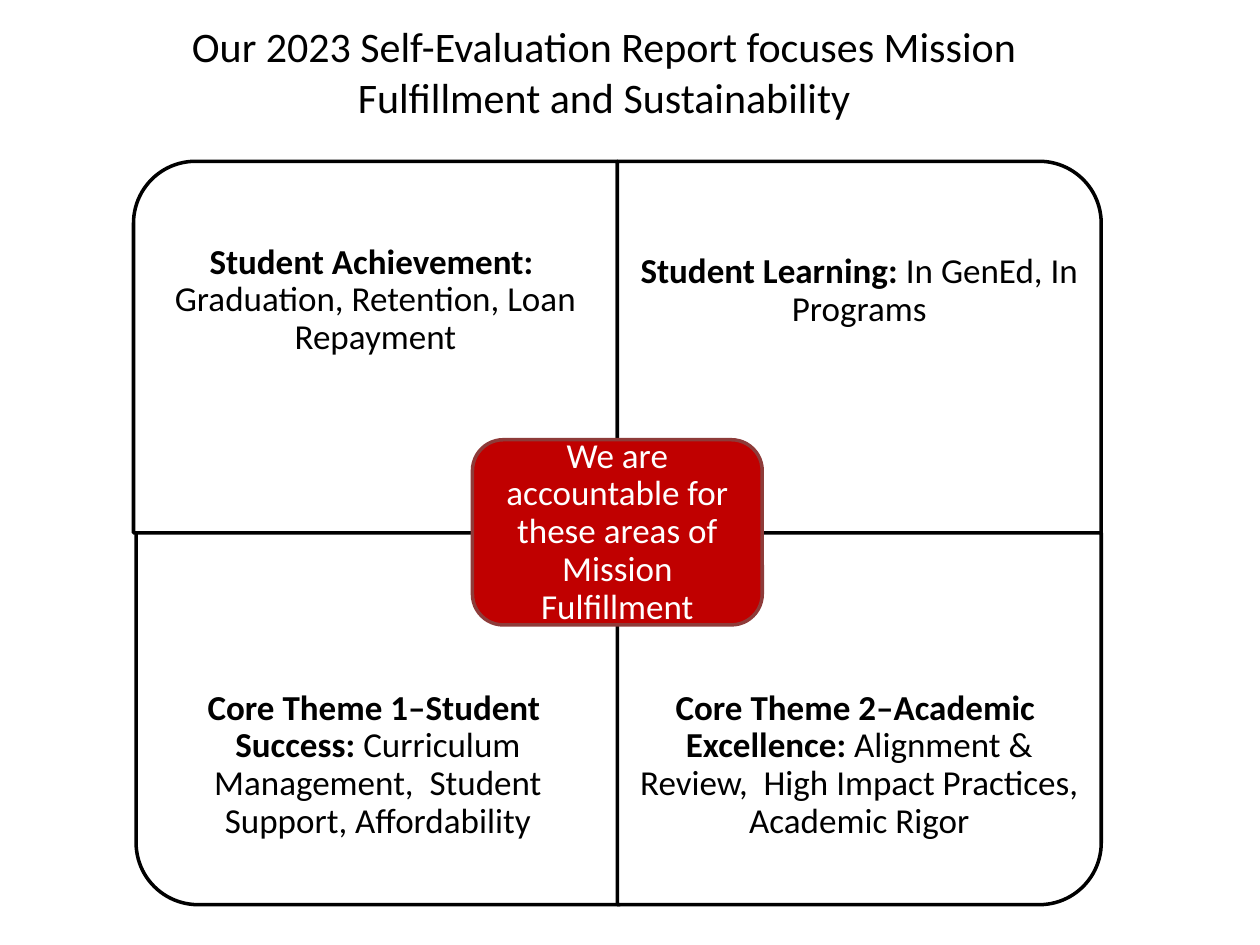
from pptx import Presentation
from pptx.dml.color import RGBColor as Rgb
from pptx.enum.shapes import MSO_SHAPE as Shape
from pptx.enum.text import MSO_ANCHOR as Anchor, MSO_AUTO_SIZE as Auto, PP_ALIGN as Align
from pptx.util import Inches, Pt

COLORS = {"ink": "000000", "paper": "FFFFFF", "red": "C00000", "edge": "8E3B39"}
FONT = "Calibri"
WIDE, HIGH = 3.84, 2.95   # one quadrant
TEXT_H = 2.21             # its text area, at the outer edge
TOP, MID = 1.28, 4.23

# left, top, rotation, text top, side inset, bottom inset, bold text, plain text
QUADS = [
    (1.06, TOP, 270, TOP, 0.16, 0.16,
     "Student Achievement:  ", "Graduation, Retention, Loan Repayment"),
    (4.9, TOP, 0, TOP, 0.07, 0.22,
     "Student Learning: ", "In GenEd, In Programs"),
    (1.08, MID, 180, 4.97, 0.16, 0.16,
     "Core Theme 1–Student  Success: ",
     "Curriculum Management,  Student Support, Affordability"),
    (4.9, MID, 90, 4.97, 0.16, 0.16,
     "Core Theme 2–Academic  Excellence:",
     " Alignment & Review,  High Impact Practices, Academic Rigor"),
]


def color(name):
    return Rgb.from_string(COLORS[name])


def write(frame, runs, size, ink, space, insets):
    """Fill a frame with one centred paragraph of (text, bold) runs."""
    frame.word_wrap = True
    frame.auto_size = Auto.NONE
    frame.vertical_anchor = Anchor.MIDDLE
    (frame.margin_left, frame.margin_top,
     frame.margin_right, frame.margin_bottom) = map(Inches, insets)
    para = frame.paragraphs[0]
    para.alignment = Align.CENTER
    para.line_spacing = space
    para.space_before = Pt(0)
    for text, bold in runs:
        run = para.add_run()
        run.text = text
        run.font.name = FONT
        run.font.size = Pt(size)
        run.font.bold = bold
        run.font.color.rgb = color(ink)


def add_box(slide, kind, box, fill, line, turn=0):
    shape = slide.shapes.add_shape(kind, *map(Inches, box))
    shape.rotation = turn
    shape.shadow.inherit = False
    shape.fill.solid()
    shape.fill.fore_color.rgb = color(fill)
    shape.line.color.rgb = color(line)
    shape.line.width = Pt(2)
    return shape


def add_quad(slide, left, top, turn, text_top, side, low, head, body):
    # A quarter turn swaps width and height around the same centre
    wide, high = (HIGH, WIDE) if turn in (90, 270) else (WIDE, HIGH)
    box = (left + (WIDE - wide) / 2, top + (HIGH - high) / 2, wide, high)
    add_box(slide, Shape.ROUND_1_RECTANGLE, box, "paper", "ink", turn)
    # Upright text over the turned shape
    text = slide.shapes.add_textbox(*map(Inches, (left, text_top, WIDE, TEXT_H)))
    write(text.text_frame, [(head, True), (body, False)], 20, "ink", 0.9,
          (side, side, side, low))


def add_title(slide, text):
    title = slide.shapes.title
    title.left, title.top, title.width, title.height = map(
        Inches, (0.74, 0.11, 8.11, 0.91))
    write(title.text_frame, [(text, False)], 24, "ink", 1.0, (0.1, 0.05, 0.1, 0.05))


def main():
    deck = Presentation()
    deck.slide_width, deck.slide_height = Inches(10), Inches(7.5)
    slide = deck.slides.add_slide(deck.slide_layouts[5])

    # Title
    add_title(slide, "Our 2023 Self-Evaluation Report focuses Mission "
                     "Fulfillment and Sustainability")

    # Four quadrants
    for quad in QUADS:
        add_quad(slide, *quad)

    # Centre
    core = add_box(slide, Shape.ROUNDED_RECTANGLE, (3.75, 3.49, 2.3, 1.47), "red", "edge")
    write(core.text_frame,
          [("We are accountable for these areas of Mission Fulfillment", False)],
          20, "paper", 0.9, (0.15,) * 4)

    deck.save("out.pptx")


if __name__ == "__main__":
    main()
